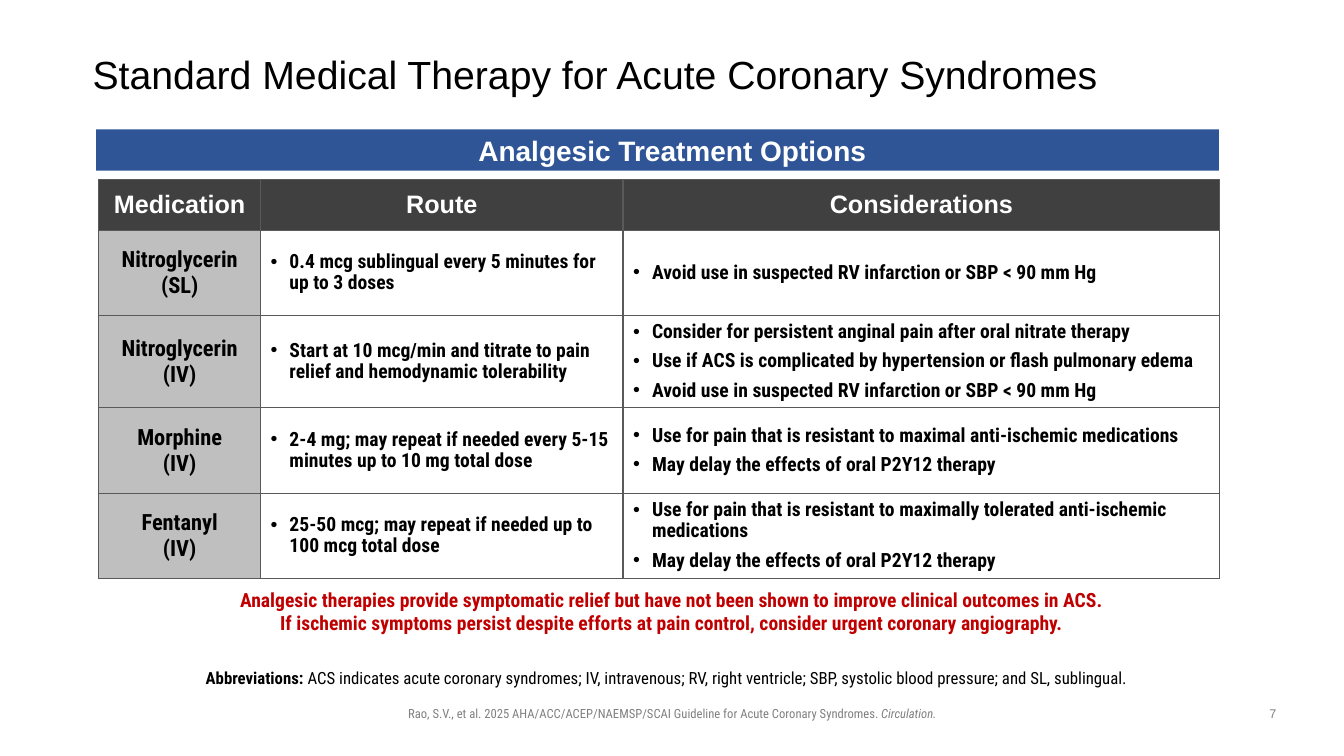
"""Build the slide on analgesic treatment options in acute coronary syndromes."""
from dataclasses import dataclass

from lxml.etree import SubElement
from pptx import Presentation
from pptx.dml.color import RGBColor
from pptx.enum.shapes import MSO_SHAPE
from pptx.enum.text import MSO_ANCHOR, PP_ALIGN
from pptx.oxml.ns import qn
from pptx.util import Pt

HEADING_FONT = "Arial"
BODY_FONT = "Roboto Condensed"
BLACK, WHITE, GREY, RED = "000000", "FFFFFF", "808080", "C00000"
BANNER_BLUE, HEADER_GREY, NAME_GREY, BORDER_GREY = "2F5597", "404040", "BFBFBF", "595959"
COLUMN_WIDTHS = (115.5, 259, 426.3)
ROW_HEIGHTS = (36, 61, 65.8, 61, 61)
HEADERS = ("Medication", "Route", "Considerations")


@dataclass(frozen=True)
class Span:
    """A piece of text that may differ in weight or slant."""

    text: str
    bold: bool = False
    italic: bool = False


@dataclass(frozen=True)
class Treatment:
    """One medication row of the table."""

    name: str
    delivery: str
    route: str
    considerations: tuple[str, ...]


@dataclass(frozen=True)
class Box:
    """A placed text box; geometry is in points."""

    area: tuple[float, float, float, float]
    lines: tuple[tuple[Span, ...], ...]
    size: float
    font: str = BODY_FONT
    color: str = BLACK
    align: PP_ALIGN = PP_ALIGN.CENTER
    anchor: MSO_ANCHOR = MSO_ANCHOR.TOP
    spacing: float = 1.0
    margins: tuple[float, float, float, float] = (7.2, 3.6, 7.2, 3.6)


TREATMENTS = (
    Treatment("Nitroglycerin", "(SL)", "0.4 mcg sublingual every 5 minutes for up to 3 doses",
              ("Avoid use in suspected RV infarction or SBP < 90 mm Hg",)),
    Treatment("Nitroglycerin", "(IV)",
              "Start at 10 mcg/min and titrate to pain relief and hemodynamic tolerability",
              ("Consider for persistent anginal pain after oral nitrate therapy",
               "Use if ACS is complicated by hypertension or flash pulmonary edema",
               "Avoid use in suspected RV infarction or SBP < 90 mm Hg")),
    Treatment("Morphine", "(IV)",
              "2-4 mg; may repeat if needed every 5-15 minutes up to 10 mg total dose",
              ("Use for pain that is resistant to maximal anti-ischemic medications",
               "May delay the effects of oral P2Y12 therapy")),
    Treatment("Fentanyl", "(IV)", "25-50 mcg; may repeat if needed up to 100 mcg total dose",
              ("Use for pain that is resistant to maximally tolerated anti-ischemic medications",
               "May delay the effects of oral P2Y12 therapy")),
)

BOXES = (
    Box((66.2, 28.8, 828, 51.8),
        ((Span("Standard Medical Therapy for Acute Coronary Syndromes"),),),
        28, HEADING_FONT, align=PP_ALIGN.LEFT, anchor=MSO_ANCHOR.MIDDLE, spacing=0.9,
        margins=(0, 0, 0, 0)),
    Box((197.3, 97.2, 566, 23), ((Span("Analgesic Treatment Options", bold=True),),),
        20, HEADING_FONT, WHITE, anchor=MSO_ANCHOR.MIDDLE, spacing=0.9, margins=(0, 0, 0, 0)),
    Box((38.9, 416.2, 882, 41),
        ((Span("Analgesic therapies provide symptomatic relief but have not been shown "
               "to improve clinical outcomes in ACS.", bold=True),),
         (Span("If ischemic symptoms persist despite efforts at pain control, "
               "consider urgent coronary angiography.", bold=True),)),
        14, color=RED),
    Box((135.4, 462.2, 689, 33.1),
        ((Span("Abbreviations: ", bold=True),
          Span("ACS indicates acute coronary syndromes; IV, intravenous; RV, right ventricle; "
               "SBP, systolic blood pressure; and SL, sublingual.")),),
        12, anchor=MSO_ANCHOR.BOTTOM, spacing=0.9, margins=(0, 3.6, 7.2, 3.6)),
    Box((169.9, 500.4, 620.6, 18),
        ((Span("Rao, S.V., et al. 2025 AHA/ACC/ACEP/NAEMSP/SCAI Guideline for "
               "Acute Coronary Syndromes. "), Span("Circulation.", italic=True)),),
        9, color=GREY),
    Box((894.2, 500.4, 30.2, 18.7), ((Span("7"),),), 9, HEADING_FONT, GREY),
)


def rgb(color: str) -> RGBColor:
    """Turn a hex string into a colour."""
    return RGBColor.from_string(color)


def write_span(para, text: str, *, size: float, font: str = BODY_FONT, color: str = BLACK,
               bold: bool = False, italic: bool = False) -> None:
    """Add formatted text to a paragraph."""
    span = para.add_run()
    span.text = text
    span.font.name = font
    span.font.size = Pt(size)
    span.font.bold = bold
    span.font.italic = italic
    span.font.color.rgb = rgb(color)


def next_para(frame, index: int):
    """Return the first paragraph of a frame, or add a further one."""
    return frame.add_paragraph() if index else frame.paragraphs[0]


def add_box(page, box: Box) -> None:
    """Draw a text box."""
    frame = page.shapes.add_textbox(*map(Pt, box.area)).text_frame
    frame.word_wrap = True
    frame.vertical_anchor = box.anchor
    (frame.margin_left, frame.margin_top,
     frame.margin_right, frame.margin_bottom) = map(Pt, box.margins)
    for index, line in enumerate(box.lines):
        para = next_para(frame, index)
        para.alignment = box.align
        para.line_spacing = box.spacing
        for span in line:
            write_span(para, span.text, size=box.size, font=box.font, color=box.color,
                       bold=span.bold, italic=span.italic)


def add_banner(page) -> None:
    """Draw the blue bar behind the table heading."""
    banner = page.shapes.add_shape(MSO_SHAPE.RECTANGLE, Pt(68.6), Pt(92.4), Pt(802), Pt(29.5))
    banner.shadow.inherit = False
    banner.fill.solid()
    banner.fill.fore_color.rgb = rgb(BANNER_BLUE)
    banner.line.fill.background()


def style_cell(cell, fill: str | None) -> None:
    """Give a cell its borders, anchor and fill."""
    cell.vertical_anchor = MSO_ANCHOR.MIDDLE
    properties = cell._tc.get_or_add_tcPr()
    for side in ("a:lnL", "a:lnR", "a:lnT", "a:lnB"):
        border = SubElement(properties, qn(side), w=str(Pt(1)))
        SubElement(SubElement(border, qn("a:solidFill")), qn("a:srgbClr"), val=BORDER_GREY)
    if fill is None:
        cell.fill.background()
    else:
        cell.fill.solid()
        cell.fill.fore_color.rgb = rgb(fill)


def fill_centred(cell, lines: tuple[str, ...], *, fill: str, size: float,
                 font: str = BODY_FONT, color: str = BLACK) -> None:
    """Write centred bold lines on a filled cell."""
    style_cell(cell, fill)
    for index, line in enumerate(lines):
        para = next_para(cell.text_frame, index)
        para.alignment = PP_ALIGN.CENTER
        write_span(para, line, size=size, font=font, color=color, bold=True)


def fill_bullets(cell, lines: tuple[str, ...]) -> None:
    """Write a bulleted list in a cell."""
    style_cell(cell, None)
    for index, line in enumerate(lines):
        para = next_para(cell.text_frame, index)
        para.line_spacing = 0.9
        para.space_after = Pt(6)
        properties = para._p.get_or_add_pPr()
        properties.set("marL", str(Pt(13.5)))
        properties.set("indent", str(-Pt(13.5)))
        SubElement(properties, qn("a:buFont"), typeface="Arial")
        SubElement(properties, qn("a:buChar"), char="•")
        write_span(para, line, size=14, bold=True)


def add_treatments(page) -> None:
    """Draw the table of treatments."""
    table = page.shapes.add_table(len(ROW_HEIGHTS), len(COLUMN_WIDTHS), Pt(70.6), Pt(128.5),
                                  Pt(sum(COLUMN_WIDTHS)), Pt(sum(ROW_HEIGHTS))).table
    table.first_row = table.horz_banding = False
    for column, width in zip(table.columns, COLUMN_WIDTHS):
        column.width = Pt(width)
    for row, height in zip(table.rows, ROW_HEIGHTS):
        row.height = Pt(height)
    for index, header in enumerate(HEADERS):
        fill_centred(table.cell(0, index), (header,), fill=HEADER_GREY, size=18,
                     font=HEADING_FONT, color=WHITE)
    for index, treatment in enumerate(TREATMENTS, start=1):
        fill_centred(table.cell(index, 0), (treatment.name, treatment.delivery),
                     fill=NAME_GREY, size=16)
        fill_bullets(table.cell(index, 1), (treatment.route,))
        fill_bullets(table.cell(index, 2), treatment.considerations)


def main() -> None:
    """Build and save the deck."""
    deck = Presentation()
    deck.slide_width, deck.slide_height = Pt(960), Pt(540)
    page = deck.slides.add_slide(deck.slide_layouts[6])
    add_banner(page)
    add_treatments(page)
    for box in BOXES:
        add_box(page, box)
    deck.save("out.pptx")


if __name__ == "__main__":
    main()
